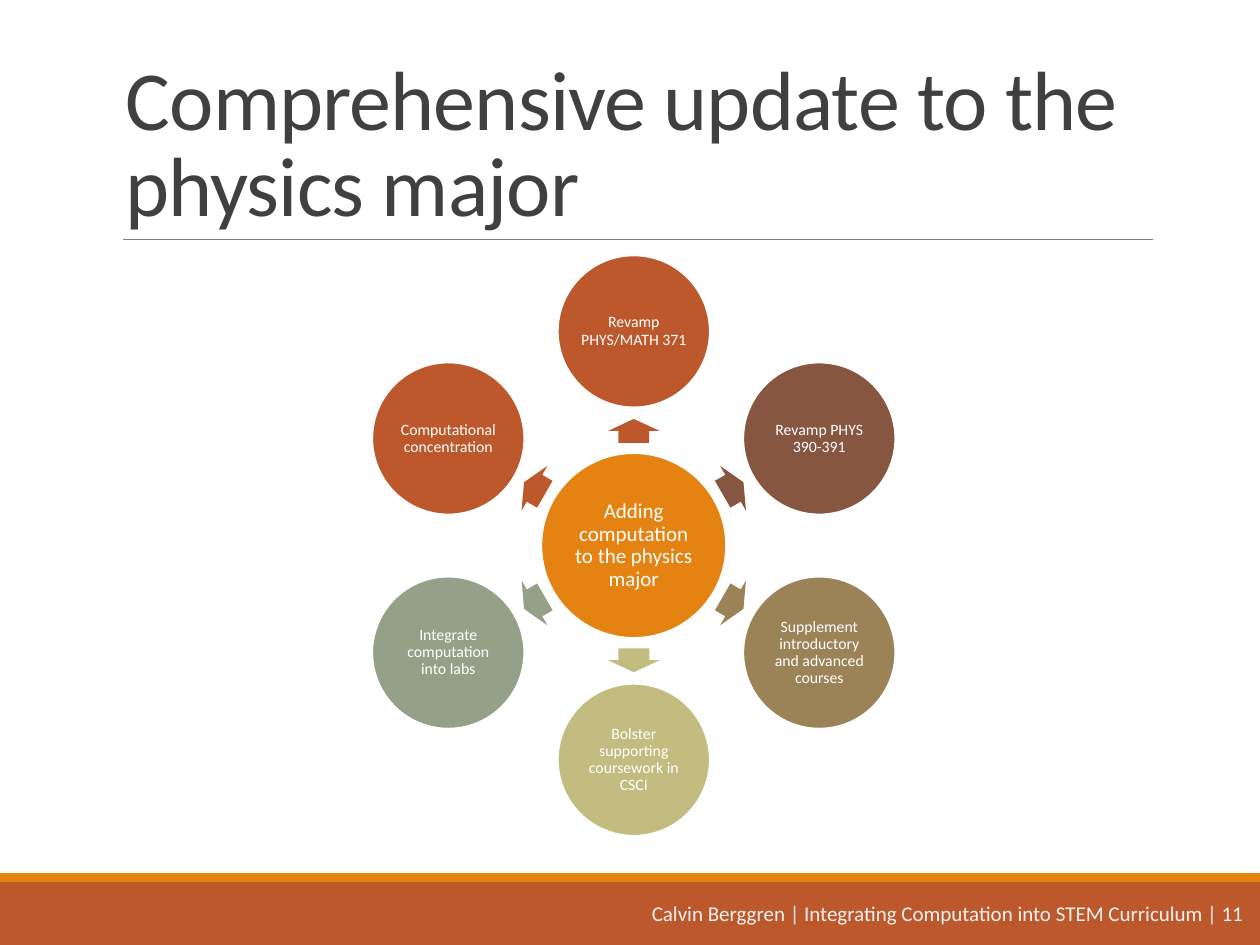
import math

import lxml.etree
import pptx
import pptx.dml.color
import pptx.enum.shapes
import pptx.enum.text
import pptx.oxml.ns
import pptx.util

Inches = pptx.util.Inches
Pt = pptx.util.Pt
SHAPE = pptx.enum.shapes.MSO_SHAPE
ALIGN = pptx.enum.text.PP_ALIGN
ANCHOR = pptx.enum.text.MSO_ANCHOR

COLORS = {
    "white": "FFFFFF",
    "title": "404040",
    "rule": "808080",
    "footer": "F2F2F2",
    "orange": "E48312",
    "rust": "BD582C",
    "brown": "865640",
    "tan": "9B8357",
    "khaki": "C2BC80",
    "sage": "94A088",
}
FONT = "Calibri"

HUB_TEXT = "Adding computation to the physics major"
# Clockwise from the top
UPDATES = [
    ("Revamp PHYS/MATH 371", "rust"),
    ("Revamp PHYS 390-391", "brown"),
    ("Supplement introductory and advanced courses", "tan"),
    ("Bolster supporting coursework in CSCI", "khaki"),
    ("Integrate computation into labs", "sage"),
    ("Computational concentration", "rust"),
]

CENTER = (5.03, 4.33)
HUB_SIZE = 1.47
UPDATE_SIZE = 1.21
UPDATE_RADIUS = 1.7
ARROW_RADIUS = 0.91
ARROW_SIZE = (0.19, 0.41)


def rgb(color):
    return pptx.dml.color.RGBColor.from_string(COLORS[color])


def write(shape, text, size, color, align, anchor, spacing=1.0):
    frame = shape.text_frame
    frame.word_wrap = True
    frame.vertical_anchor = anchor
    frame.text = text
    paragraph = frame.paragraphs[0]
    paragraph.alignment = align
    paragraph.line_spacing = spacing
    run = paragraph.runs[0]
    run.font.name = FONT
    run.font.size = Pt(size)
    run.font.color.rgb = rgb(color)
    return run


def add_filled(shapes, kind, box, color):
    shape = shapes.add_shape(kind, *map(Inches, box))
    shape.shadow.inherit = False
    shape.fill.solid()
    shape.fill.fore_color.rgb = rgb(color)
    shape.line.fill.background()
    return shape


def centered_box(center, width, height):
    return center[0] - width / 2, center[1] - height / 2, width, height


def around_hub(radius, angle):
    """Point at a clockwise angle in degrees, with 0 pointing right."""
    turn = math.radians(angle)
    return (CENTER[0] + radius * math.cos(turn),
            CENTER[1] + radius * math.sin(turn))


def add_circle(shapes, center, diameter, text, size, color, inset):
    box = centered_box(center, diameter, diameter)
    circle = add_filled(shapes, SHAPE.OVAL, box, color)
    circle.line.color.rgb = rgb("white")
    circle.line.width = Pt(1.25)
    frame = circle.text_frame
    frame.margin_left = frame.margin_right = Inches(inset)
    frame.margin_top = frame.margin_bottom = Inches(inset)
    write(circle, text, size, "white", ALIGN.CENTER, ANCHOR.MIDDLE, 0.9)


def add_arrow(shapes, angle, color):
    box = centered_box(around_hub(ARROW_RADIUS, angle), *ARROW_SIZE)
    arrow = add_filled(shapes, SHAPE.RIGHT_ARROW, box, color)
    arrow.adjustments[0] = 0.6
    arrow.adjustments[1] = 0.5
    arrow.rotation = angle % 360


def add_footer(shapes):
    add_filled(shapes, SHAPE.RECTANGLE, (0, 7, 10, 0.5), "rust")
    add_filled(shapes, SHAPE.RECTANGLE, (0, 6.93, 10, 0.07), "orange")
    footer = shapes.add_textbox(*map(Inches, (4.02, 6.99, 5.95, 0.51)))
    write(footer,
          "Calvin Berggren | Integrating Computation into STEM Curriculum | 11",
          12, "footer", ALIGN.RIGHT, ANCHOR.MIDDLE)


def add_title(shapes):
    rule = shapes.add_connector(
        pptx.enum.shapes.MSO_CONNECTOR.STRAIGHT,
        *map(Inches, (0.98, 1.9, 9.15, 1.9)))
    rule.line.color.rgb = rgb("rule")
    rule.line.width = Pt(0.5)
    rule_properties = rule._element.find(pptx.oxml.ns.qn("p:spPr"))
    lxml.etree.SubElement(rule_properties, pptx.oxml.ns.qn("a:effectLst"))

    title = shapes.add_textbox(*map(Inches, (0.9, 0.31, 8.25, 1.59)))
    run = write(title, "Comprehensive update to the physics major",
                48, "title", ALIGN.LEFT, ANCHOR.BOTTOM, 0.85)
    run._r.get_or_add_rPr().set("spc", "-50")


def add_radial_diagram(shapes):
    diagram = shapes.add_group_shape().shapes
    add_circle(diagram, CENTER, HUB_SIZE, HUB_TEXT, 12, "orange", 0.02)
    for index, (text, color) in enumerate(UPDATES):
        angle = index * 360 / len(UPDATES) - 90
        add_arrow(diagram, angle, color)
        add_circle(diagram, around_hub(UPDATE_RADIUS, angle), UPDATE_SIZE,
                   text, 9, color, 0.01)


def main():
    deck = pptx.Presentation()
    deck.slide_width = Inches(10)
    deck.slide_height = Inches(7.5)
    shapes = deck.slides.add_slide(deck.slide_layouts[6]).shapes
    add_footer(shapes)
    add_title(shapes)
    add_radial_diagram(shapes)
    deck.save("out.pptx")


if __name__ == "__main__":
    main()
